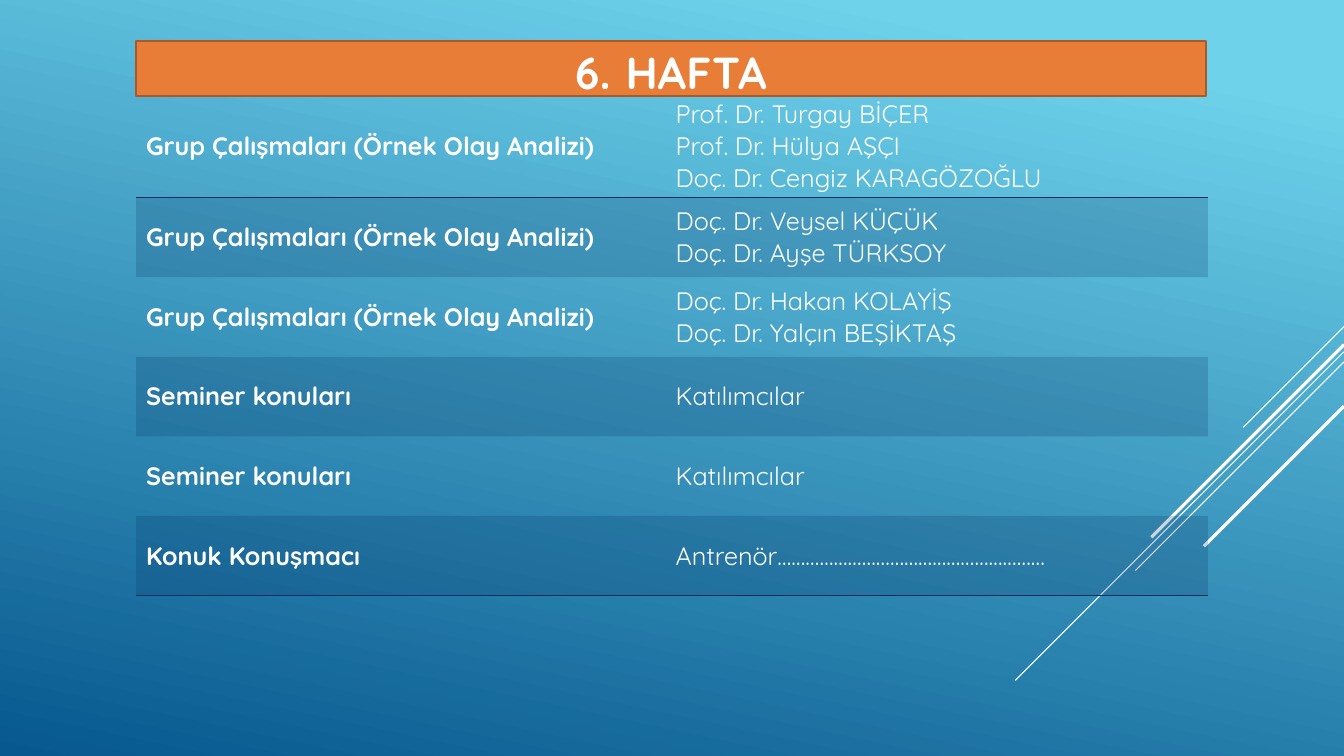
from lxml.etree import SubElement
from pptx import Presentation
from pptx.dml.color import RGBColor
from pptx.enum.text import MSO_ANCHOR, MSO_AUTO_SIZE, PP_ALIGN
from pptx.oxml import parse_xml
from pptx.oxml.ns import nsdecls, qn
from pptx.util import Inches, Pt

WHITE = RGBColor(0xFF, 0xFF, 0xFF)
NAVY = RGBColor(0x05, 0x2F, 0x61)
ORANGE = RGBColor(0xE8, 0x7D, 0x37)
RUST = RGBColor(0xAC, 0x59, 0x29)
SKY = RGBColor(0x6E, 0xD2, 0xEB)
OCEAN = RGBColor(0x06, 0x58, 0x8E)

WIDTH, HEIGHT = 13.33, 7.5
LEFT, TITLE_TOP, TABLE_TOP = 1.35, 0.41, 0.94
COLUMNS = (5.25, 5.38)
FIRST_ROW, ROW = 1.02, 0.79
NO_STYLE = "{2D5ABB26-0587-4C30-8999-92F81FD0307C}"

TITLE_FONT = {"name": "Quicksand", "size": Pt(32), "bold": True}
TOPIC_FONT = {"name": "Quicksand", "size": Pt(18), "bold": True}
SPEAKER_FONT = {**TOPIC_FONT, "bold": False}

# Height at the right edge, horizontal reach of the diagonal, line width
DIAGONALS = [
    (3.24, 1.00, 0.75),
    (3.49, 3.26, 0.75),
    (3.59, 2.07, 0.75),
    (3.42, 1.91, 2.25),
    (4.03, 1.39, 2.25),
]

CASE_STUDY = "Grup Çalışmaları (Örnek Olay Analizi)"
SEMINAR = ("Seminer konuları", ["Katılımcılar"])
PROGRAMME = [
    (CASE_STUDY, ["Prof. Dr. Turgay BİÇER", "Prof. Dr. Hülya AŞÇI",
                  "Doç. Dr. Cengiz KARAGÖZOĞLU"]),
    (CASE_STUDY, ["Doç. Dr. Veysel KÜÇÜK", "Doç. Dr. Ayşe TÜRKSOY"]),
    (CASE_STUDY, ["Doç. Dr. Hakan KOLAYİŞ", "Doç. Dr. Yalçın BEŞİKTAŞ"]),
    SEMINAR,
    SEMINAR,
    ("Konuk Konuşmacı", ["Antrenör…………………………………………………"]),
]


def set_values(target, values):
    for name, value in values.items():
        setattr(target, name, value)


def write_lines(frame, lines, font):
    """Write one paragraph per line, all in the same font."""
    for index, line in enumerate(lines):
        para = frame.add_paragraph() if index else frame.paragraphs[0]
        span = para.add_run()
        span.text = line
        set_values(span.font, font)
        span.font.color.rgb = WHITE


def paint_background(slide):
    fill = slide.background.fill
    fill.gradient()
    fill.gradient_angle = 360 - 102
    for stop, color, position in zip(fill.gradient_stops, (SKY, OCEAN), (0.1, 1)):
        stop.color.rgb = color
        stop.position = position


def add_diagonal(slide, top, reach, weight):
    """Draw a 45 degree line down and left from the slide's right edge."""
    ends = (WIDTH, top, WIDTH - reach, top + reach)
    line = slide.shapes.add_connector(1, *map(Inches, ends))
    line.line.color.rgb = WHITE
    line.line.width = Pt(weight)
    SubElement(line._element.spPr, qn("a:effectLst"))


def format_title(slide, text):
    title = slide.shapes.title
    set_values(title, {"left": Inches(LEFT), "top": Inches(TITLE_TOP),
                       "width": Inches(10.61), "height": Inches(0.54)})
    title.fill.solid()
    title.fill.fore_color.rgb = ORANGE
    title.line.color.rgb = RUST
    title.line.width = Pt(1.25)
    frame = title.text_frame
    set_values(frame, {"vertical_anchor": MSO_ANCHOR.MIDDLE, "word_wrap": True,
                       "auto_size": MSO_AUTO_SIZE.NONE})
    write_lines(frame, [text], TITLE_FONT)
    set_values(frame.paragraphs[0], {"alignment": PP_ALIGN.CENTER, "line_spacing": 1.1})


def shade(cell):
    """Fill the cell with see-through navy."""
    cell.fill.solid()
    cell.fill.fore_color.rgb = NAVY
    color = cell._tc.tcPr.find(".//" + qn("a:srgbClr"))
    SubElement(color, qn("a:alpha"), val="20000")


def underline(cell):
    """Give the cell a navy bottom border."""
    border = parse_xml(
        f'<a:lnB {nsdecls("a")} w="{Pt(1)}"><a:solidFill>'
        f'<a:srgbClr val="{NAVY}"/></a:solidFill></a:lnB>')
    cell._tc.get_or_add_tcPr().insert(0, border)


def add_programme(slide):
    row_heights = [FIRST_ROW] + [ROW] * (len(PROGRAMME) - 1)
    box = (LEFT, TABLE_TOP, sum(COLUMNS), sum(row_heights))
    table = slide.shapes.add_table(len(PROGRAMME), len(COLUMNS), *map(Inches, box)).table
    set_values(table, {"first_row": False, "horz_banding": False})
    table._tbl.tblPr.find(qn("a:tableStyleId")).text = NO_STYLE
    for column, width in zip(table.columns, COLUMNS):
        column.width = Inches(width)
    for index, (topic, speakers) in enumerate(PROGRAMME):
        row = table.rows[index]
        row.height = Inches(row_heights[index])
        contents = (([topic], TOPIC_FONT), (speakers, SPEAKER_FONT))
        for cell, (lines, font) in zip(row.cells, contents):
            set_values(cell, {"vertical_anchor": MSO_ANCHOR.MIDDLE,
                              "margin_top": 0, "margin_bottom": 0})
            write_lines(cell.text_frame, lines, font)
            if index % 2:
                shade(cell)
            else:
                cell.fill.background()
            if index in (0, len(PROGRAMME) - 1):
                underline(cell)


def main():
    deck = Presentation()
    set_values(deck, {"slide_width": Inches(WIDTH), "slide_height": Inches(HEIGHT)})
    slide = deck.slides.add_slide(deck.slide_layouts.get_by_name("Title Only"))
    paint_background(slide)
    for diagonal in DIAGONALS:
        add_diagonal(slide, *diagonal)
    add_programme(slide)
    format_title(slide, "6.\tHAFTA")
    deck.save("out.pptx")


if __name__ == "__main__":
    main()
